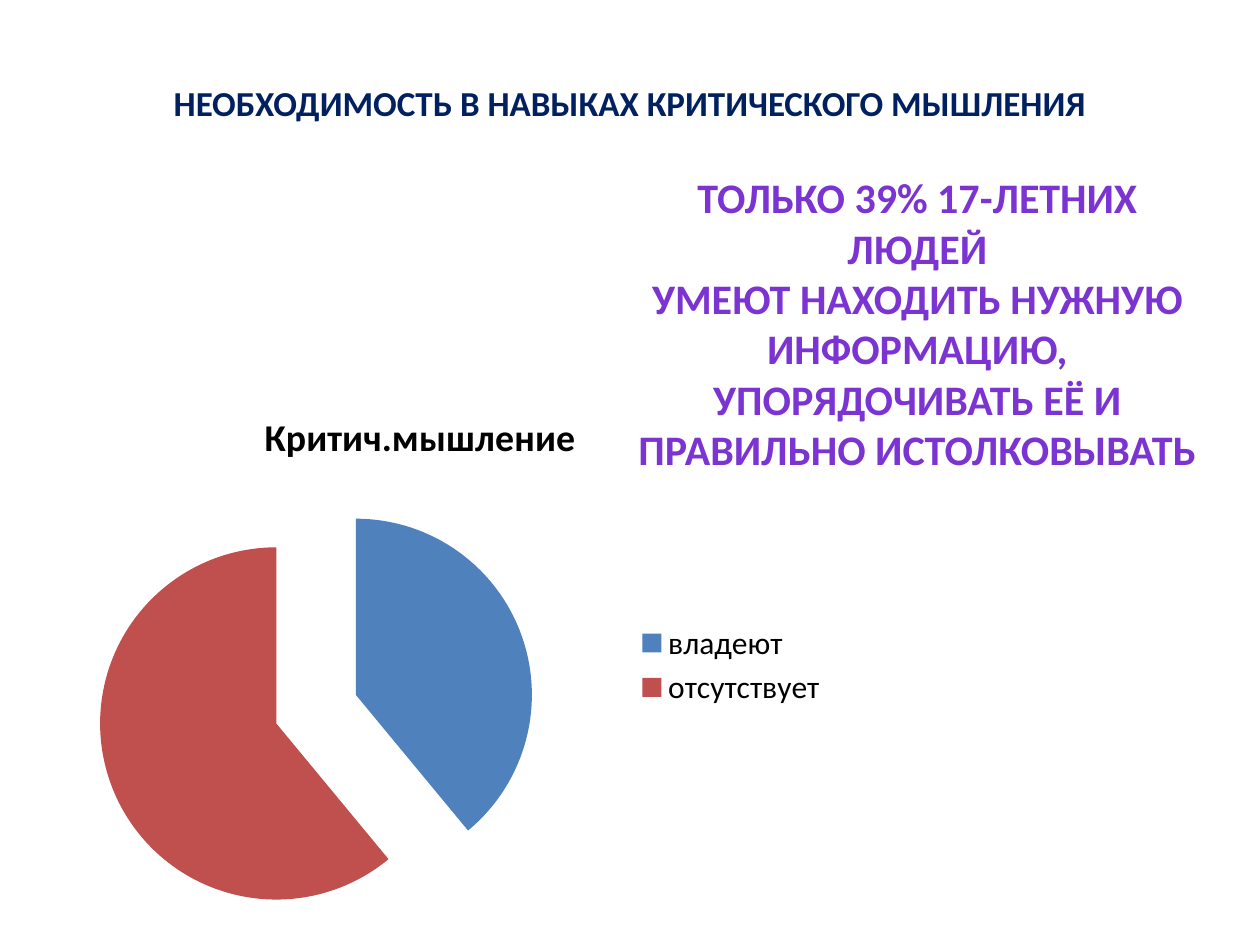
from lxml.etree import Element
from pptx import Presentation
from pptx.chart.data import CategoryChartData
from pptx.dml.color import RGBColor
from pptx.enum.chart import XL_CHART_TYPE, XL_LEGEND_POSITION
from pptx.enum.text import MSO_ANCHOR, MSO_AUTO_SIZE, PP_ALIGN
from pptx.oxml.ns import qn
from pptx.util import Inches, Pt

WIDTH, HEIGHT = Inches(10), Inches(7.5)
TITLE = "НЕОБХОДИМОСТЬ В НАВЫКАХ КРИТИЧЕСКОГО МЫШЛЕНИЯ"
STATEMENT = [
    "ТОЛЬКО 39% 17-ЛЕТНИХ ЛЮДЕЙ",
    "УМЕЮТ НАХОДИТЬ НУЖНУЮ ИНФОРМАЦИЮ,",
    "УПОРЯДОЧИВАТЬ ЕЁ И",
    "ПРАВИЛЬНО ИСТОЛКОВЫВАТЬ",
]
SKILL_SHARES = {"владеют": (39, "4F81BD"), "отсутствует": (61, "C0504D")}
CHART_TITLE = "Критич.мышление"
EXPLOSION = 24


def color(value):
    return RGBColor.from_string(value)


def area(left, top, width, height):
    """Turn shares of the slide's size into lengths."""
    return (int(WIDTH * left), int(HEIGHT * top),
            int(WIDTH * width), int(HEIGHT * height))


def format_font(font, size, hex_color, bold=False):
    values = {"name": "Calibri", "size": Pt(size), "bold": bold}
    for name, value in values.items():
        setattr(font, name, value)
    font.color.rgb = color(hex_color)


def write_centered(shape, lines, size, hex_color):
    frame = shape.text_frame
    settings = {
        "text": "\n".join(lines),
        "word_wrap": True,
        "auto_size": MSO_AUTO_SIZE.SHAPE_TO_FIT_TEXT,
        "vertical_anchor": MSO_ANCHOR.TOP,
    }
    for name, value in settings.items():
        setattr(frame, name, value)
    for paragraph in frame.paragraphs:
        paragraph.alignment = PP_ALIGN.CENTER
        for run in paragraph.runs:
            format_font(run.font, size, hex_color, bold=True)


def add_title(slide):
    title = slide.shapes.title
    title.left, title.top, title.width, title.height = area(0.125, 0.08, 0.75, 0.058)
    write_centered(title, [TITLE], 20, "002060")


def add_statement(slide):
    box = slide.shapes.add_textbox(*area(0.492, 0.175, 0.472, 0.336))
    write_centered(box, STATEMENT, 24, "7B34D2")


def add_skill_pie(slide):
    data = CategoryChartData()
    data.categories = list(SKILL_SHARES)
    data.add_series(CHART_TITLE, [share for share, _ in SKILL_SHARES.values()])
    chart = slide.shapes.add_chart(
        XL_CHART_TYPE.PIE, *area(0, 0.408, 0.667, 0.592), data).chart
    format_font(chart.font, 18, "000000")

    chart.has_title = True
    chart.chart_title.include_in_layout = False
    title_frame = chart.chart_title.text_frame
    title_frame.text = CHART_TITLE
    format_font(title_frame.paragraphs[0].runs[0].font, 21.6, "000000", bold=True)

    chart.has_legend = True
    chart.legend.position = XL_LEGEND_POSITION.RIGHT
    chart.legend.include_in_layout = False
    format_font(chart.legend.font, 18, "000000")

    plot = chart.plots[0]
    plot.vary_by_categories = True
    series = plot.series[0]
    for index, (_, hex_color) in enumerate(SKILL_SHARES.values()):
        fill = series.points[index].format.fill
        fill.solid()
        fill.fore_color.rgb = color(hex_color)
    explode(series)


def explode(series):
    """Pull all slices away from the centre."""
    explosion = Element(qn("c:explosion"), val=str(EXPLOSION))
    series._element.find(qn("c:dPt")).addprevious(explosion)


def main():
    presentation = Presentation()
    presentation.slide_width, presentation.slide_height = WIDTH, HEIGHT
    slide = presentation.slides.add_slide(presentation.slide_layouts[5])
    add_title(slide)
    add_statement(slide)
    add_skill_pie(slide)
    presentation.save("out.pptx")


if __name__ == "__main__":
    main()
